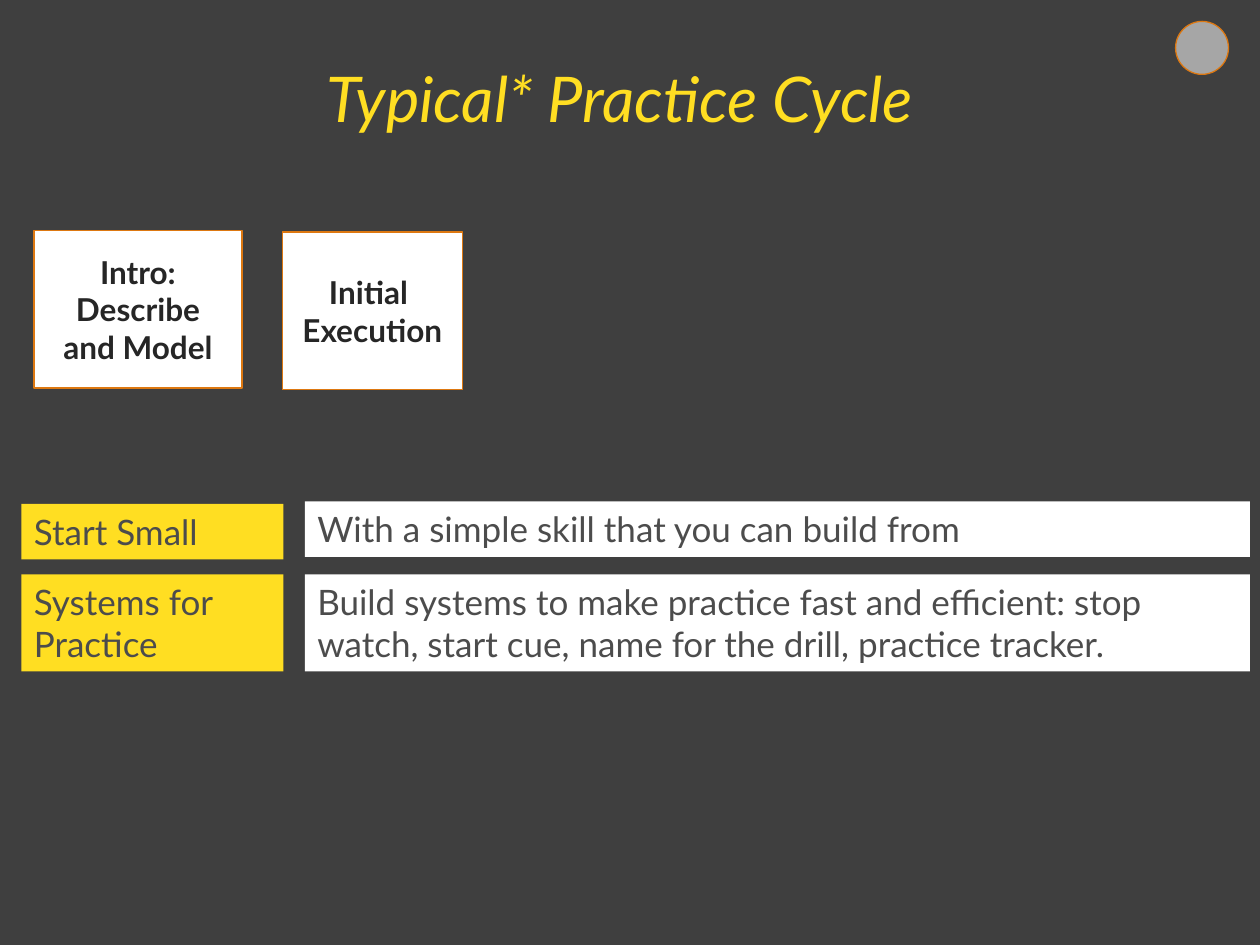
from pptx import Presentation
from pptx.dml.color import RGBColor
from pptx.enum.shapes import MSO_SHAPE
from pptx.enum.text import MSO_ANCHOR, PP_ALIGN
from pptx.util import Inches, Pt

RECT, OVAL = MSO_SHAPE.RECTANGLE, MSO_SHAPE.OVAL
LEFT, MID = PP_ALIGN.LEFT, PP_ALIGN.CENTER
TOP, CENTER = MSO_ANCHOR.TOP, MSO_ANCHOR.MIDDLE

HUES = {
    "back": "3F3F3F", "gold": "FFDE22", "white": "FFFFFF", "rim": "DD7811",
    "dot": "A6A6A6", "dark": "262626", "gray": "4C4C4C",
}
TITLE = "Typical* Practice Cycle"
STEPS = [
    (["Intro: Describe and Model"], (0.27, 1.83, 1.65, 1.25)),
    (["Initial ", "Execution"], (2.24, 1.84, 1.43, 1.25)),
]
COLS = [(0.17, 2.08, "gold"), (2.42, 7.5, "white")]
ROWS = [
    (0.44, [(4, "Start Small"),
            (3.98, "With a simple skill that you can build from")]),
    (0.77, [(4.56, "Systems for Practice"),
            (4.56, "Build systems to make practice fast and efficient: "
                   "stop watch, start cue, name for the drill, practice tracker.")]),
]


def hue(name):
    return RGBColor.from_string(HUES[name])


def write(shape, lines, size, color, align, anchor, bold=False, italic=False):
    frame = shape.text_frame
    frame.word_wrap = True
    frame.vertical_anchor = anchor
    frame.text = "\n".join(lines)
    for para in frame.paragraphs:
        para.alignment = align
        font = para.font
        font.name, font.size = "Lato", Pt(size)
        font.bold, font.italic = bold, italic
        font.color.rgb = hue(color)


def block(slide, kind, box, fill, rim=None):
    shape = slide.shapes.add_shape(kind, *map(Inches, box))
    shape.shadow.inherit = False
    shape.fill.solid()
    shape.fill.fore_color.rgb = hue(fill)
    if rim:
        shape.line.color.rgb = hue(rim)
        shape.line.width = Pt(0.75)
    else:
        shape.line.fill.background()
    return shape


def main():
    deck = Presentation()
    deck.slide_width, deck.slide_height = Inches(10), Inches(7.5)
    slide = deck.slides.add_slide(deck.slide_layouts[6])
    slide.background.fill.solid()
    slide.background.fill.fore_color.rgb = hue("back")

    head = slide.shapes.add_textbox(*map(Inches, (0.42, 0.3, 9, 0.95)))
    write(head, [TITLE], 36, "gold", MID, CENTER, italic=True)

    block(slide, OVAL, (9.33, 0.17, 0.42, 0.42), "dot", "rim")
    for lines, box in STEPS:
        step = block(slide, RECT, box, "white", "rim")
        write(step, lines, 18, "dark", MID, CENTER, bold=True)

    for high, cells in ROWS:
        for (left, wide, fill), (top, text) in zip(COLS, cells):
            cell = block(slide, RECT, (left, top, wide, high), fill)
            write(cell, [text], 20, "gray", LEFT, TOP)

    deck.save("out.pptx")


if __name__ == "__main__":
    main()
